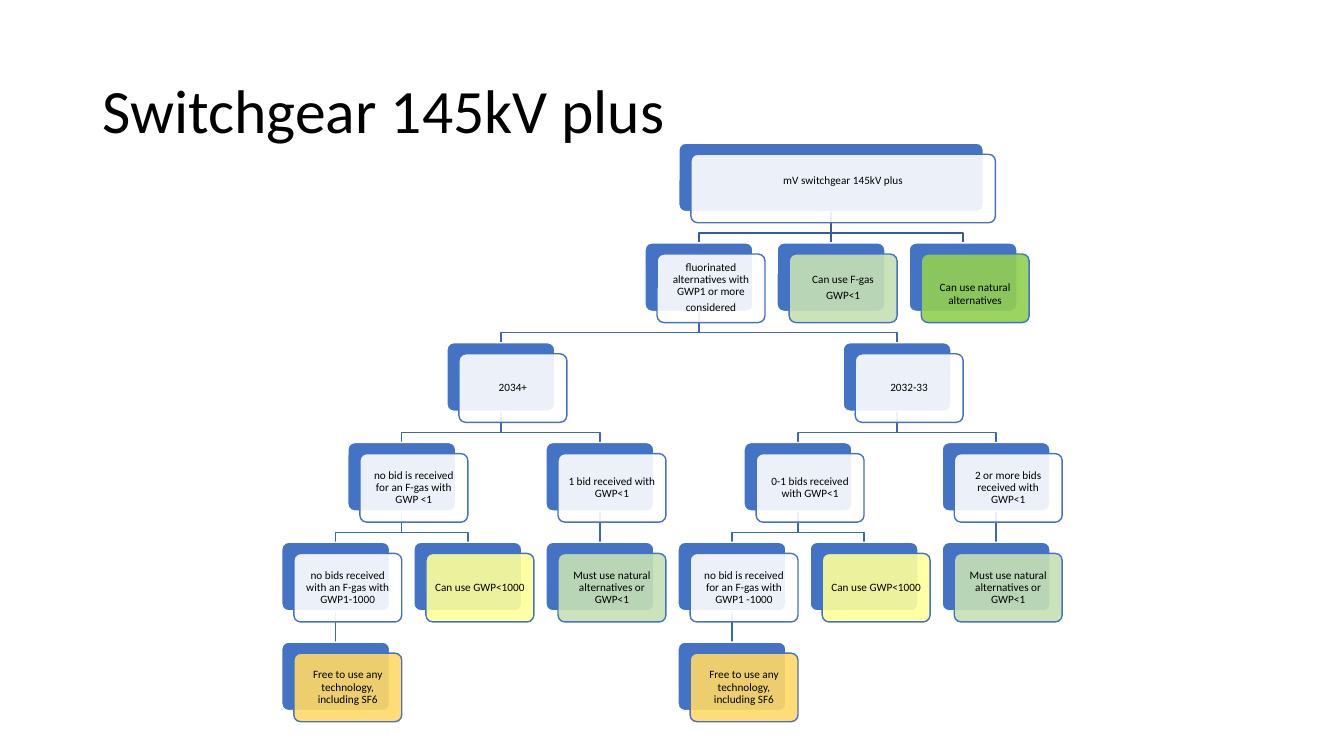
from dataclasses import dataclass

from lxml.etree import SubElement
from pptx import Presentation
from pptx.dml.color import RGBColor
from pptx.enum.shapes import MSO_CONNECTOR, MSO_SHAPE
from pptx.enum.text import MSO_ANCHOR, PP_ALIGN
from pptx.oxml.ns import qn
from pptx.util import Inches, Pt


@dataclass(frozen=True)
class Theme:
    font: str = "Calibri"
    title_size: float = 44
    label_size: float = 8
    text: str = "000000"
    accent: str = "4472C4"
    root_link: str = "365B9D"
    link: str = "3E67B2"
    white: str = "FFFFFF"
    green: str = "92D050"
    pale_green: str = "C5E0B4"
    yellow: str = "FFFF99"
    amber: str = "FFD966"


THEME = Theme()


@dataclass(frozen=True)
class Node:
    column: float
    lines: tuple
    children: tuple = ()
    fill: str = THEME.white
    width: float = 1.07
    pad_top: float = 0.05
    pad_bottom: float = 0.05


FIRST_CENTER, COLUMN_STEP = 3.33, 1.31
FIRST_TOP, ROW_STEP = 1.42, 0.99
BOX_HEIGHT, BEND = 0.68, 0.21
OFFSET_X, OFFSET_Y = 0.12, 0.11


def leaf(column, text, fill):
    return Node(column, (text,), fill=fill)


def free_choice(column):
    return leaf(column, "Free to use any technology, including SF6", THEME.amber)


def low_gwp(column):
    return leaf(column, "Can use GWP<1000", THEME.yellow)


def must_use(column):
    return leaf(column, "Must use natural alternatives or GWP<1", THEME.pale_green)


def bid_branch(column, text, fallback_text):
    fallback = Node(column - 0.5, (fallback_text,), (free_choice(column - 0.5),))
    return Node(column, (text,), (fallback, low_gwp(column + 0.5)))


def decision_tree():
    from_2034 = Node(1.25, ("2034+",), (
        bid_branch(0.5, "no bid is received for an F-gas with GWP <1",
                   "no bids received with an F-gas with GWP1-1000"),
        Node(2, ("1 bid received with GWP<1",), (must_use(2),)),
    ))
    until_2033 = Node(4.25, ("2032-33",), (
        bid_branch(3.5, "0-1 bids received with GWP<1",
                   "no bid is received for an F-gas with GWP1 -1000"),
        Node(5, ("2 or more bids received with GWP<1",), (must_use(5),)),
    ))
    fluorinated = Node(
        2.75, ("fluorinated alternatives with GWP1 or more", "considered"),
        (from_2034, until_2033))
    f_gas = Node(3.75, ("Can use F-gas", "GWP<1"), fill=THEME.pale_green)
    natural = Node(4.75, ("Can use natural alternatives",),
                   fill=THEME.green, pad_top=0.17)
    return Node(3.75, ("mV switchgear 145kV plus",),
                (fluorinated, f_gas, natural), width=3.02, pad_bottom=0.2)


def center(node):
    return FIRST_CENTER + node.column * COLUMN_STEP


def row_top(level):
    return FIRST_TOP + level * ROW_STEP


def apply(target, formats):
    for name, value in formats.items():
        setattr(target, name, value)


def write(frame, lines, size, para_format, frame_format):
    apply(frame, {"word_wrap": True, "vertical_anchor": MSO_ANCHOR.MIDDLE,
                  **frame_format})
    for index, line in enumerate(lines):
        para = frame.add_paragraph() if index else frame.paragraphs[0]
        apply(para, {"line_spacing": 0.9, **para_format})
        span = para.add_run()
        span.text = line
        apply(span.font, {"name": THEME.font, "size": Pt(size)})
        span.font.color.rgb = RGBColor.from_string(THEME.text)


def paint_line(shape, color):
    shape.line.color.rgb = RGBColor.from_string(color)
    shape.line.width = Pt(1)


def add_title(page, text):
    box = page.shapes.add_textbox(Inches(0.92), Inches(0.4), Inches(11.5), Inches(1.45))
    write(box.text_frame, (text,), THEME.title_size, {"alignment": PP_ALIGN.LEFT}, {})


def add_link(page, parent, child, level):
    start, end = center(parent), center(child)
    top, bottom = row_top(level) + BOX_HEIGHT, row_top(level + 1)
    color = THEME.link if level else THEME.root_link
    if parent.column == child.column:
        link = page.shapes.add_connector(
            MSO_CONNECTOR.STRAIGHT, Inches(start), Inches(top), Inches(end), Inches(bottom))
        SubElement(link.element.spPr, qn("a:effectLst"))
        paint_line(link, color)
        return
    bend = top + BEND
    corners = [(start, bend), (end, bend), (end, bottom)]
    builder = page.shapes.build_freeform(Inches(start), Inches(top))
    builder.add_line_segments([(Inches(x), Inches(y)) for x, y in corners], close=False)
    link = builder.convert_to_shape()
    link.shadow.inherit = False
    link.fill.background()
    paint_line(link, color)


def add_links(page, node, level=0):
    for child in node.children:
        add_link(page, node, child, level)
        add_links(page, child, level + 1)


def add_card(page, left, top, width, fill, line):
    card = page.shapes.add_shape(
        MSO_SHAPE.ROUNDED_RECTANGLE, Inches(left), Inches(top),
        Inches(width), Inches(BOX_HEIGHT))
    card.adjustments[0] = 0.1
    card.shadow.inherit = False
    card.fill.solid()
    card.fill.fore_color.rgb = RGBColor.from_string(fill)
    paint_line(card, line)
    return card


def add_node(page, node, level=0):
    left, top = center(node) - node.width / 2, row_top(level)
    add_card(page, left, top, node.width, THEME.accent, THEME.white)
    front = add_card(page, left + OFFSET_X, top + OFFSET_Y, node.width,
                     node.fill, THEME.accent)
    color = front.element.spPr.find(qn("a:solidFill")).find(qn("a:srgbClr"))
    SubElement(color, qn("a:alpha"), val="90000")
    write(front.text_frame, node.lines, THEME.label_size,
          {"alignment": PP_ALIGN.CENTER, "space_after": Pt(2.8)},
          {"margin_left": Inches(0.05), "margin_right": Inches(0.05),
           "margin_top": Inches(node.pad_top), "margin_bottom": Inches(node.pad_bottom)})
    for child in node.children:
        add_node(page, child, level + 1)


def main():
    deck = Presentation()
    apply(deck, {"slide_width": Inches(13.33), "slide_height": Inches(7.5)})
    page = deck.slides.add_slide(deck.slide_layouts[6])
    add_title(page, "Switchgear 145kV plus")
    tree = decision_tree()
    add_links(page, tree)
    add_node(page, tree)
    deck.save("out.pptx")


if __name__ == "__main__":
    main()
